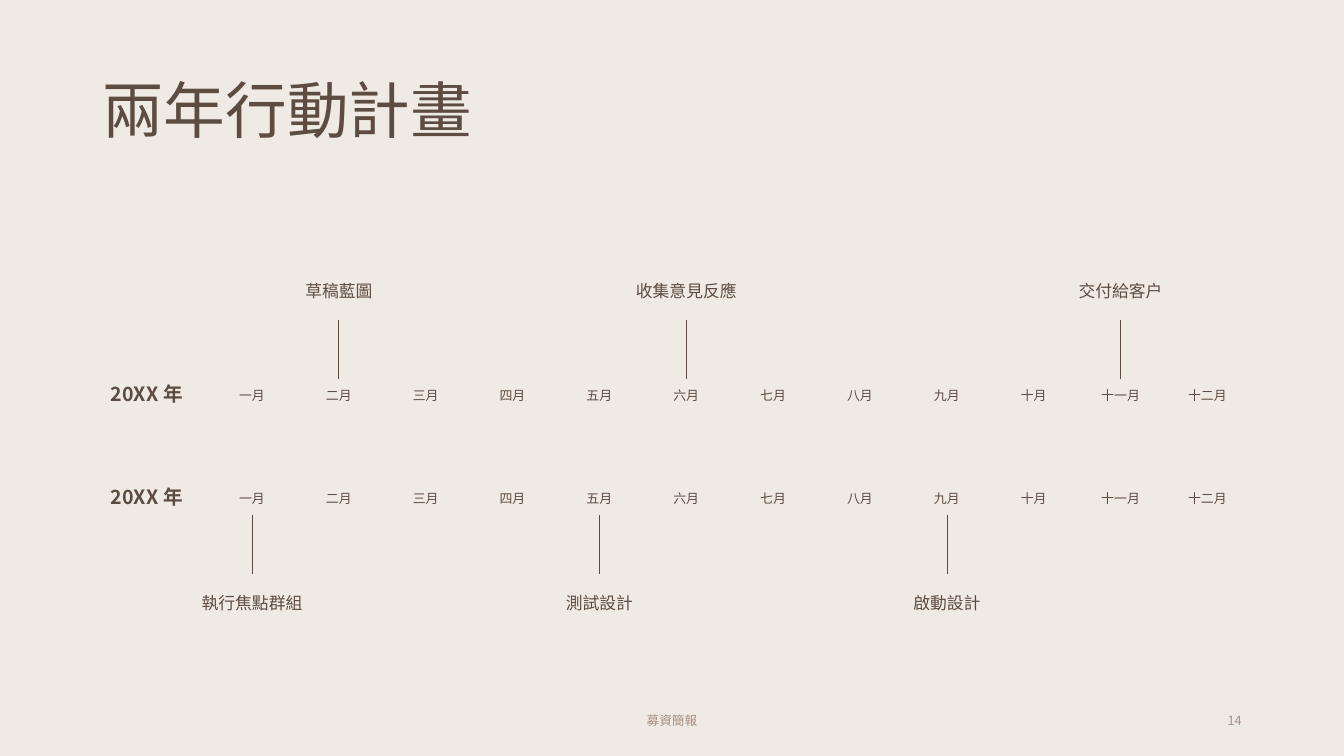
from pptx import Presentation
from pptx.dml.color import RGBColor
from pptx.enum import shapes, text
from pptx.oxml.ns import qn
from pptx.util import Pt

FONT = "Noto Sans CJK TC"
COLORS = {"paper": "EFEAE4", "ink": "5D4C41", "footer": "A89183"}
LEFT, CENTER, RIGHT = text.PP_ALIGN.LEFT, text.PP_ALIGN.CENTER, text.PP_ALIGN.RIGHT
TOP, MIDDLE, BOTTOM = text.MSO_ANCHOR.TOP, text.MSO_ANCHOR.MIDDLE, text.MSO_ANCHOR.BOTTOM

MONTHS = ["一月", "二月", "三月", "四月", "五月", "六月",
          "七月", "八月", "九月", "十月", "十一月", "十二月"]
YEAR_WIDTH, YEAR_HEIGHT = 71.3, 36
MONTH_WIDTH, MONTH_HEIGHT, MONTH_DROP = 50.4, 15.84, 11.25
LABEL_WIDTH, LABEL_HEIGHT = 162, 43.9
LINE_LENGTH = 42


def add_text(page, box, words, size, align=LEFT, anchor=MIDDLE,
             spacing=1.0, color="ink", bold=False):
    """Place one line of text in a (left, top, width, height) box."""
    frame = page.shapes.add_textbox(*[Pt(length) for length in box]).text_frame
    frame.word_wrap = True
    frame.vertical_anchor = anchor
    para = frame.paragraphs[0]
    para.alignment = align
    para.line_spacing = spacing
    span = para.add_run()
    span.text = words
    span.font.name = FONT
    span.font.size = Pt(size)
    span.font.bold = bold
    span.font.color.rgb = RGBColor.from_string(COLORS[color])
    # The East Asian face is a separate setting
    properties = span.font._element
    face = properties.makeelement(qn("a:ea"), {"typeface": FONT})
    properties.find(qn("a:latin")).addnext(face)


def add_marker(page, x, top):
    """Draw the thin vertical line between a month and its milestone."""
    line = page.shapes.add_connector(
        shapes.MSO_CONNECTOR.STRAIGHT, Pt(x), Pt(top), Pt(x), Pt(top + LINE_LENGTH))
    line.line.width = Pt(0.5)
    line.line.color.rgb = RGBColor.from_string(COLORS["ink"])
    properties = line._element.spPr
    properties.append(properties.makeelement(qn("a:effectLst"), {}))


def add_year(page, box, year, milestones, above):
    """Draw a year row; milestones maps a month to its label, above or below."""
    left, top, width, height = box
    add_text(page, (left, top, YEAR_WIDTH, height), year, 14, spacing=0.9, bold=True)

    # Months, evenly spaced up to the right edge of the row
    first = left + 108
    pitch = (left + width - MONTH_WIDTH / 2 - first) / (len(MONTHS) - 1)
    month_top = top + MONTH_DROP
    for index, month in enumerate(MONTHS):
        center = first + index * pitch
        add_text(page, (center - MONTH_WIDTH / 2, month_top, MONTH_WIDTH, MONTH_HEIGHT),
                 month, 9.2, CENTER, TOP, 0.8)
        if month not in milestones:
            continue

        # Milestone label and its line
        if above:
            line_top = month_top - 5 - LINE_LENGTH
            label_top, anchor = line_top - 10 - LABEL_HEIGHT, BOTTOM
        else:
            line_top = month_top + MONTH_HEIGHT + 3.5
            label_top, anchor = line_top + LINE_LENGTH + 2.5, TOP
        add_text(page, (center - LABEL_WIDTH / 2, label_top, LABEL_WIDTH, LABEL_HEIGHT),
                 milestones[month], 12, CENTER, anchor, 1.5)
        add_marker(page, center, line_top)


def add_footer(page, box, words, number):
    left, top, width, height = box
    middle = 324
    add_text(page, (left + (width - middle) / 2, top, middle, height),
             words, 9, CENTER, color="footer")
    add_text(page, (left + width - 216, top, 216, height),
             number, 9, RIGHT, color="footer")


def main():
    deck = Presentation()
    deck.slide_width, deck.slide_height = Pt(960), Pt(540)
    page = deck.slides.add_slide(deck.slide_layouts[6])
    page.background.fill.solid()
    page.background.fill.fore_color.rgb = RGBColor.from_string(COLORS["paper"])

    # Title
    add_text(page, (66, 28.8, 828, 104.4), "兩年行動計畫", 44, spacing=0.9)

    # Two years of milestones
    add_year(page, (72, 264.5, 815.7, YEAR_HEIGHT), "20XX 年",
             {"二月": "草稿藍圖", "六月": "收集意見反應", "十一月": "交付給客戶"}, above=True)
    add_year(page, (72, 337.5, 815.7, YEAR_HEIGHT), "20XX 年",
             {"一月": "執行焦點群組", "五月": "測試設計", "九月": "啟動設計"}, above=False)

    # Footer
    add_footer(page, (66, 500.4, 828, 28.8), "募資簡報", "14")
    deck.save("out.pptx")


if __name__ == "__main__":
    main()
